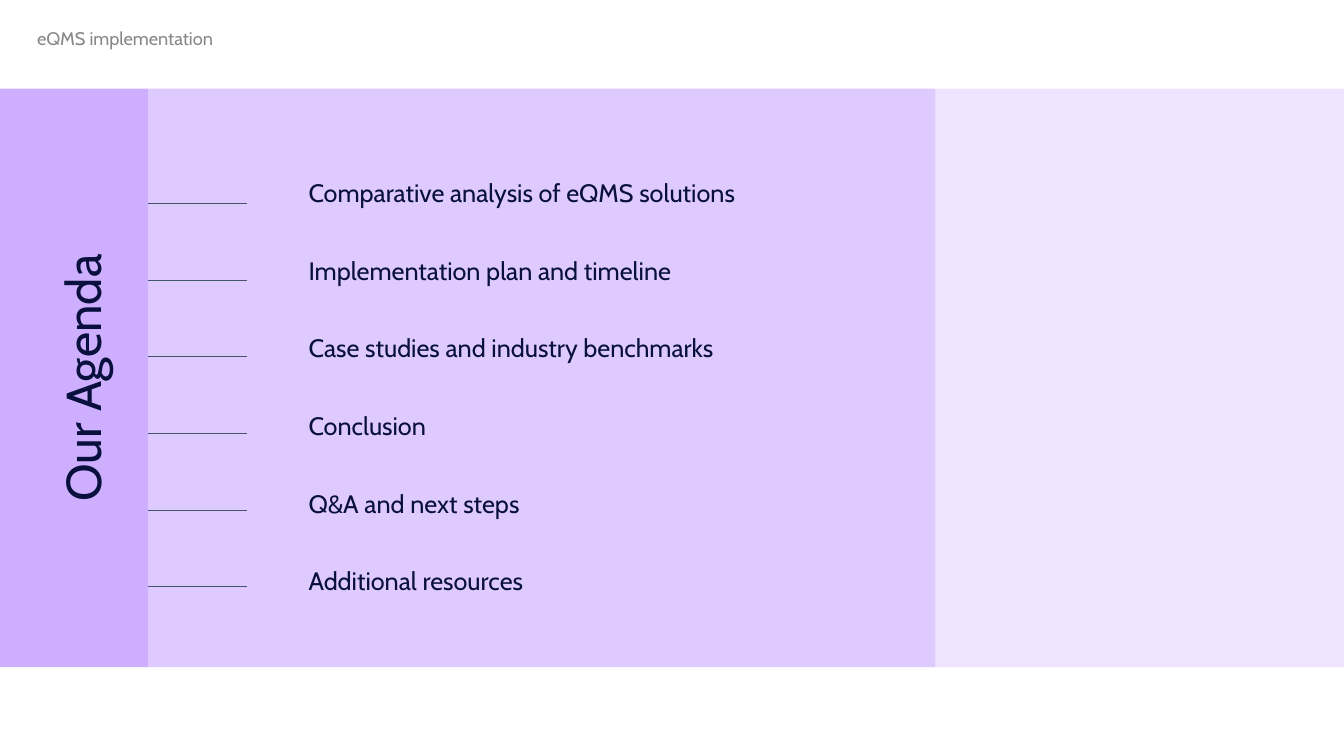
"""Build the agenda slide for an eQMS implementation deck."""
from lxml.etree import SubElement
from pptx import Presentation
from pptx.dml.color import RGBColor
from pptx.enum.shapes import MSO_CONNECTOR, MSO_SHAPE
from pptx.enum.text import MSO_ANCHOR, PP_ALIGN
from pptx.oxml.ns import qn
from pptx.util import Inches, Pt

FONT = "Cabin"
NAVY = RGBColor(0x09, 0x10, 0x3D)
GRAY = RGBColor(0x88, 0x88, 0x88)
SLATE = RGBColor(0x44, 0x54, 0x6A)
PURPLE = RGBColor(0xCD, 0xAE, 0xFF)
LAVENDER = RGBColor(0xDE, 0xCA, 0xFF)
PALE_LAVENDER = RGBColor(0xEE, 0xE4, 0xFF)

PANELS = [(0, 1.47, PURPLE), (1.47, 7.81, LAVENDER), (9.28, 4.05, PALE_LAVENDER)]
AGENDA = [
    "Comparative analysis of eQMS solutions",
    "Implementation plan and timeline",
    "Case studies and industry benchmarks",
    "Conclusion",
    "Q&A and next steps",
    "Additional resources",
]
ITEM_TOP, ITEM_STEP = 1.64, 0.77
RULE_TOP, RULE_STEP = 2.02, 0.76


def add_panel(slide, left, width, color):
    """Add a plain background panel of the common height."""
    panel = slide.shapes.add_shape(
        MSO_SHAPE.RECTANGLE, Inches(left), Inches(0.88), Inches(width), Inches(5.74)
    )
    panel.shadow.inherit = False
    panel.fill.solid()
    panel.fill.fore_color.rgb = color
    panel.line.fill.background()


def add_text(slide, text, left, top, width, height, size, color=NAVY, inset=0.1):
    """Add a one-paragraph text box and return it."""
    box = slide.shapes.add_textbox(
        Inches(left), Inches(top), Inches(width), Inches(height)
    )
    frame = box.text_frame
    frame.word_wrap = True
    frame.margin_left = frame.margin_right = Inches(inset)
    frame.margin_top = frame.margin_bottom = Inches(inset)
    paragraph = frame.paragraphs[0]
    paragraph.text = text
    paragraph.font.name = FONT
    paragraph.font.size = Pt(size)
    paragraph.font.color.rgb = color
    return box


def add_title(slide, text):
    """Add the title that reads upwards in the left panel."""
    title = add_text(slide, text, -1.43, 3.23, 4.69, 1.04, 35, inset=0.13)
    title.rotation = 270
    title.text_frame.paragraphs[0].alignment = PP_ALIGN.CENTER


def add_agenda_item(slide, text, top):
    """Add one indented agenda entry."""
    item = add_text(slide, text, 2.46, top, 6.28, 0.54, 18)
    item.text_frame.margin_left = Inches(0.6)
    item.text_frame.vertical_anchor = MSO_ANCHOR.MIDDLE


def add_rule(slide, top):
    """Add the thin line that leads to an agenda entry."""
    rule = slide.shapes.add_connector(
        MSO_CONNECTOR.STRAIGHT, Inches(1.47), Inches(top), Inches(2.45), Inches(top)
    )
    rule.line.color.rgb = SLATE
    rule.line.width = Pt(0.75)
    SubElement(rule._element.spPr, qn("a:effectLst"))


def main():
    """Assemble and save the slide."""
    presentation = Presentation()
    presentation.slide_width = Inches(13.33)
    presentation.slide_height = Inches(7.5)
    slide = presentation.slides.add_slide(presentation.slide_layouts[6])
    for left, width, color in PANELS:
        add_panel(slide, left, width, color)
    add_title(slide, "Our Agenda")
    for index, text in enumerate(AGENDA):
        add_agenda_item(slide, text, ITEM_TOP + index * ITEM_STEP)
        add_rule(slide, RULE_TOP + index * RULE_STEP)
    add_text(slide, "eQMS implementation", 0.27, 0.17, 2.16, 0.4, 13, GRAY)
    presentation.save("out.pptx")


if __name__ == "__main__":
    main()
